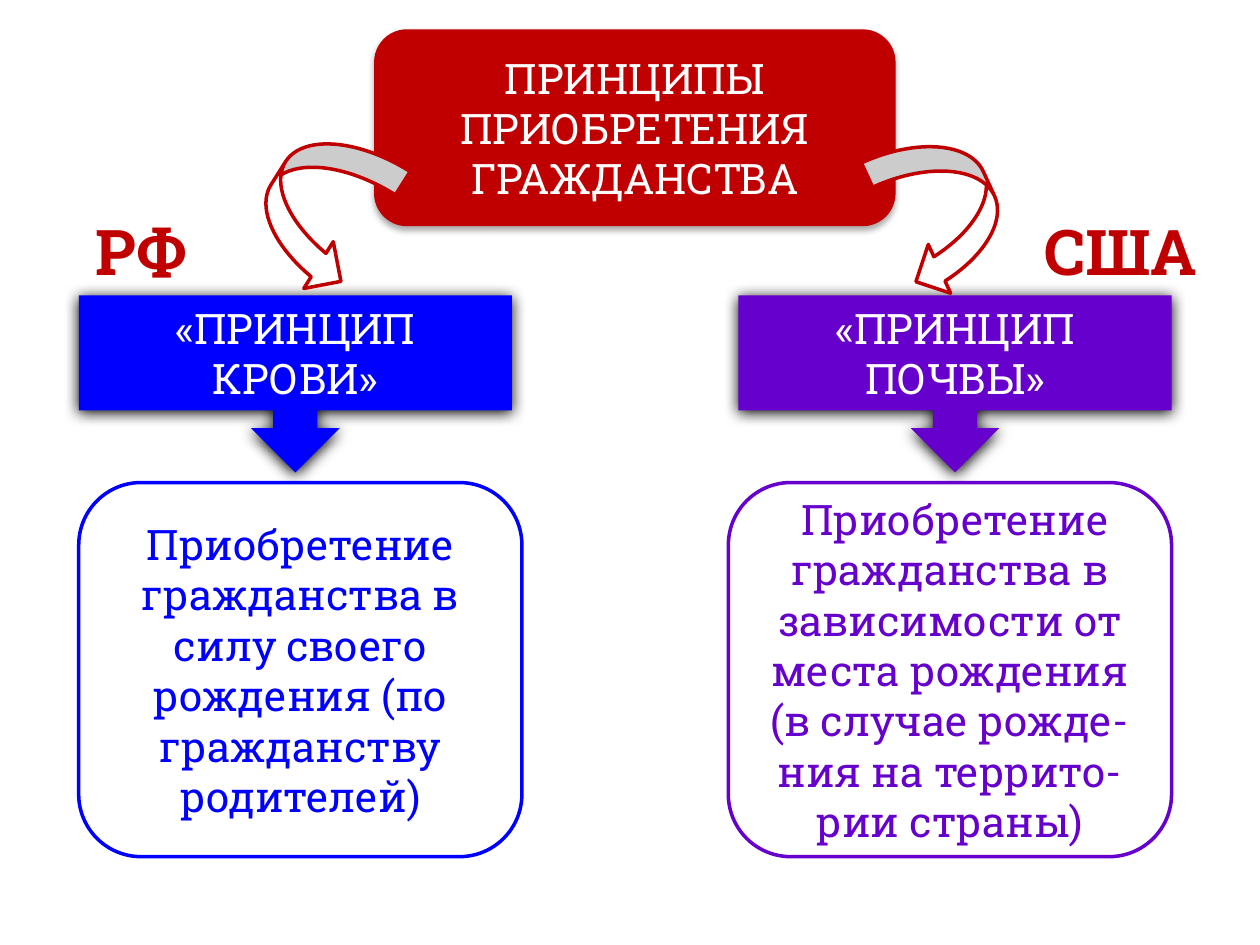
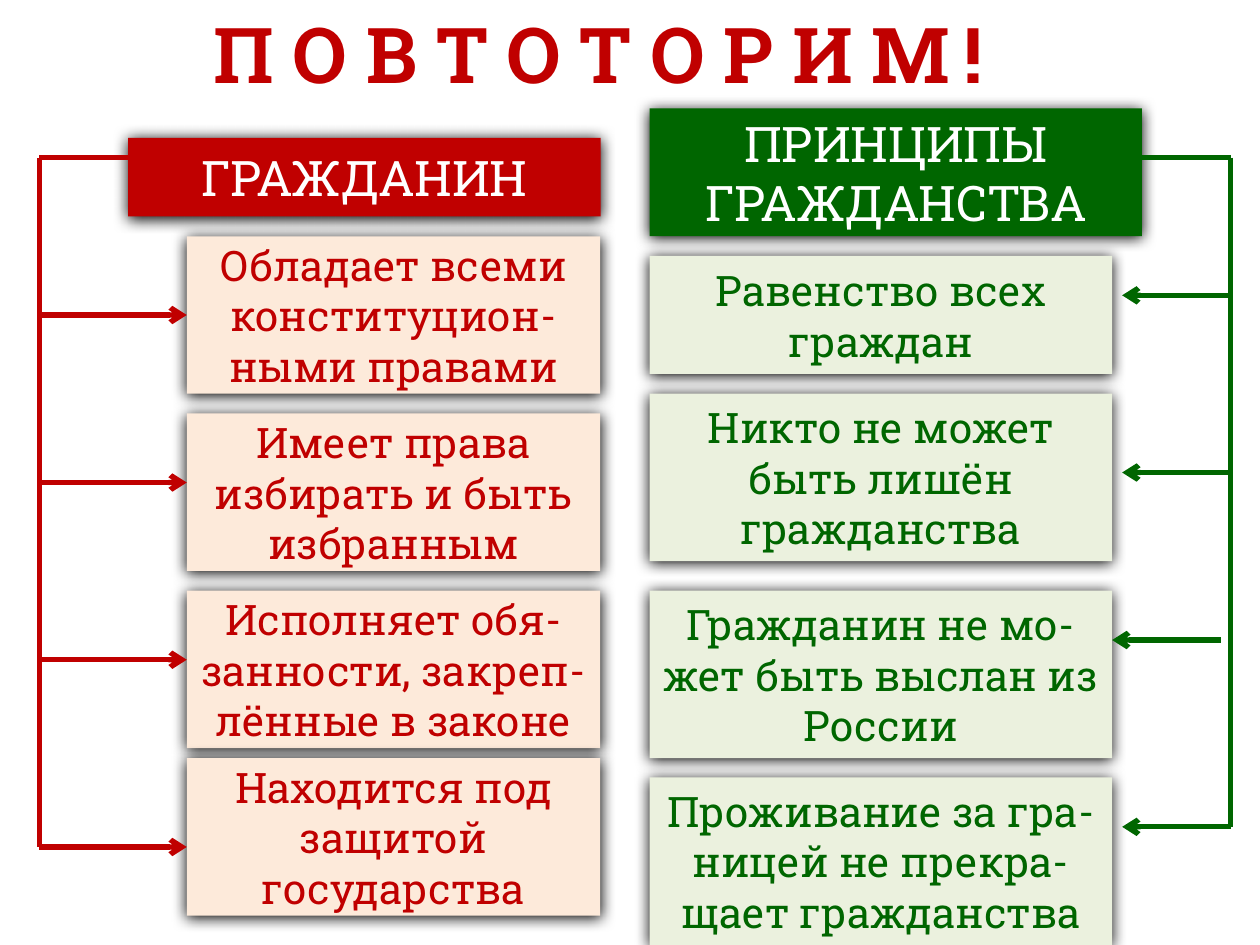
from dataclasses import dataclass

from lxml.etree import SubElement
from pptx import Presentation
from pptx.dml.color import RGBColor
from pptx.enum.shapes import MSO_CONNECTOR, MSO_SHAPE
from pptx.enum.text import MSO_ANCHOR, MSO_AUTO_SIZE, PP_ALIGN
from pptx.oxml.ns import qn
from pptx.util import Pt


@dataclass(frozen=True)
class Theme:
    font: str = "Roboto Slab"
    white: str = "FFFFFF"
    red: str = "C00000"
    blue: str = "0000FF"
    violet: str = "6600CC"
    green: str = "006600"
    pale_red: str = "FDEADA"
    pale_green: str = "EBF1DE"
    body: int = 24
    heading: int = 28
    country: int = 36
    title: int = 44
    outline: int = 2
    rail: int = 3
    # Shadows: opacity in percent, blur and distance in points
    light_shadow: tuple = (32, 3.5, 2.2)
    dark_shadow: tuple = (100, 8.5, 1)


theme = Theme()


def add_block(slide, box, text="", color=theme.white, size=theme.body, preset=None,
              fill=None, line=None, shadow=None, bold=False):
    """Add a preset shape, or a free text label when no preset is given."""
    frame = [Pt(length) for length in box]
    if preset is None:
        block = slide.shapes.add_textbox(*frame)
        body = {"word_wrap": False, "auto_size": MSO_AUTO_SIZE.SHAPE_TO_FIT_TEXT}
    else:
        block = slide.shapes.add_shape(preset, *frame)
        body = {"word_wrap": True, "vertical_anchor": MSO_ANCHOR.MIDDLE}
        block.fill.solid()
        block.fill.fore_color.rgb = RGBColor.from_string(fill)
        if line:
            block.line.color.rgb = RGBColor.from_string(line)
            block.line.width = Pt(theme.outline)
        else:
            block.line.fill.background()
        block.shadow.inherit = False
    if shadow:
        opacity, blur, distance = shadow
        effects = block.element.spPr.find(qn("a:effectLst"))
        outer = SubElement(effects, qn("a:outerShdw"), blurRad=str(Pt(blur)),
                           dist=str(Pt(distance)), dir="5400000", rotWithShape="0")
        black = SubElement(outer, qn("a:srgbClr"), val="000000")
        SubElement(black, qn("a:alpha"), val=str(opacity * 1000))
    for name, value in body.items():
        setattr(block.text_frame, name, value)
    if text:
        paragraph = block.text_frame.paragraphs[0]
        paragraph.alignment = PP_ALIGN.CENTER
        run = paragraph.add_run()
        run.text = text
        run.font.color.rgb = RGBColor.from_string(color)
        for name, value in {"name": theme.font, "size": Pt(size), "bold": bold}.items():
            setattr(run.font, name, value)
    return block


def add_rail(slide, start, end, color, arrow=False):
    """Add a straight line, with an open arrowhead at its end if asked."""
    rail = slide.shapes.add_connector(
        MSO_CONNECTOR.STRAIGHT, *[Pt(length) for length in start + end])
    rail.line.color.rgb = RGBColor.from_string(color)
    rail.line.width = Pt(theme.rail)
    if arrow:
        SubElement(rail.line._get_or_add_ln(), qn("a:tailEnd"), type="arrow")
    SubElement(rail.element.spPr, qn("a:effectLst"))
    return rail


deck = Presentation()
deck.slide_width, deck.slide_height = Pt(720), Pt(540)
blank = deck.slide_layouts[6]

# Slide 1: two principles of acquiring citizenship
acquisition = deck.slides.add_slide(blank)
add_block(acquisition, (213.75, 16.75, 298, 112.5), "ПРИНЦИПЫ ПРИОБРЕТЕНИЯ ГРАЖДАНСТВА",
          preset=MSO_SHAPE.ROUNDED_RECTANGLE, fill=theme.red, shadow=theme.light_shadow)

principles = [
    (45, "«ПРИНЦИП КРОВИ»", 45, theme.blue,
     "Приобретение гражданства в силу своего рождения (по гражданству родителей)"),
    (422, "«ПРИНЦИП ПОЧВЫ»", 416.25, theme.violet,
     " Приобретение гражданства в зависимости от места рождения "
     "(в случае рожде-ния на террито-рии страны)"),
]
for principle_left, principle, meaning_left, color, meaning in principles:
    add_block(acquisition, (principle_left, 168.75, 247.5, 101.25), principle,
              preset=MSO_SHAPE.DOWN_ARROW_CALLOUT, fill=color, shadow=theme.dark_shadow)
    add_block(acquisition, (meaning_left, 275.75, 253.25, 213.75), meaning, color,
              preset=MSO_SHAPE.ROUNDED_RECTANGLE, fill=theme.white, line=color)

# Curved arrows from the heading to each principle
for preset, box, angle in [
    (MSO_SHAPE.CURVED_RIGHT_ARROW, (152, 74.25, 63.25, 90), 32.2),
    (MSO_SHAPE.CURVED_LEFT_ARROW, (508.25, 76.25, 61.25, 90), 335.4),
]:
    swoop = add_block(acquisition, box, preset=preset, fill=theme.white, line=theme.red)
    swoop.rotation = angle

# Countries
for country, left, width in [("РФ", 45, 71), ("США", 585.5, 109.5)]:
    add_block(acquisition, (left, 118, width, 51), country, theme.red, theme.country, bold=True)

# Slide 2: review
review = deck.slides.add_slide(blank)
add_block(review, (78.5, 0, 527, 60.5), "П О В Т О Т О Р И М !", theme.red, theme.title, bold=True)

# Each column: heading, cards (top, height, text), rail, arrows (start x, end x, y)
columns = [
    {
        "heading": ("ГРАЖДАНИН", (73.25, 78.75, 270, 45)),
        "color": theme.red, "tint": theme.pale_red,
        "left": 106.75, "width": 236.25,
        "cards": [
            (135, 90, "Обладает всеми конституцион-ными правами"),
            (236.25, 90, "Имеет права избирать и быть избранным"),
            (337.5, 90, "Исполняет обя-занности, закреп-лённые в законе"),
            (433.25, 90, "Находится под защитой государства"),
        ],
        "rail": 22.5, "heading_side": 78.5, "rail_end": 484,
        "arrows": [(22.5, 106.75, y) for y in (180, 275.75, 377, 484)],
    },
    {
        "heading": ("ПРИНЦИПЫ ГРАЖДАНСТВА", (371.25, 62, 281.25, 73)),
        "color": theme.green, "tint": theme.pale_green,
        "left": 371.25, "width": 264.25,
        "cards": [
            (146.25, 67.5, "Равенство всех граждан"),
            (225, 95.75, "Никто не может быть лишён гражданства"),
            (337.5, 95.75, "Гражданин не мо-жет быть выслан из России"),
            (444.25, 95.75, "Проживание за гра-ницей не прекра-щает гражданства"),
        ],
        "rail": 703.25, "heading_side": 652.5, "rail_end": 472.5,
        "arrows": [(703.25, 641.25, 168.75), (703.25, 641.25, 270),
                   (697.5, 635.5, 365.75), (703.25, 641.25, 472.5)],
    },
]
rail_top = 90
for column in columns:
    color, rail_x = column["color"], column["rail"]
    heading, heading_box = column["heading"]
    add_block(review, heading_box, heading, size=theme.heading,
              preset=MSO_SHAPE.RECTANGLE, fill=color, shadow=theme.dark_shadow)
    cards = [
        add_block(review, (column["left"], top, column["width"], height), text, color,
                  preset=MSO_SHAPE.RECTANGLE, fill=column["tint"], shadow=theme.dark_shadow)
        for top, height, text in column["cards"]
    ]

    # Rail beside the column, with an arrow to each card
    add_rail(review, (rail_x, rail_top), (column["heading_side"], rail_top), color)
    add_rail(review, (rail_x, rail_top), (rail_x, column["rail_end"]), color)
    for card, (start_x, end_x, y) in zip(cards, column["arrows"]):
        arrow = add_rail(review, (start_x, y), (end_x, y), color, arrow=True)
        if Pt(end_x) == card.left and Pt(y) == card.top + card.height // 2:
            arrow.end_connect(card, 1)

deck.save("out.pptx")
